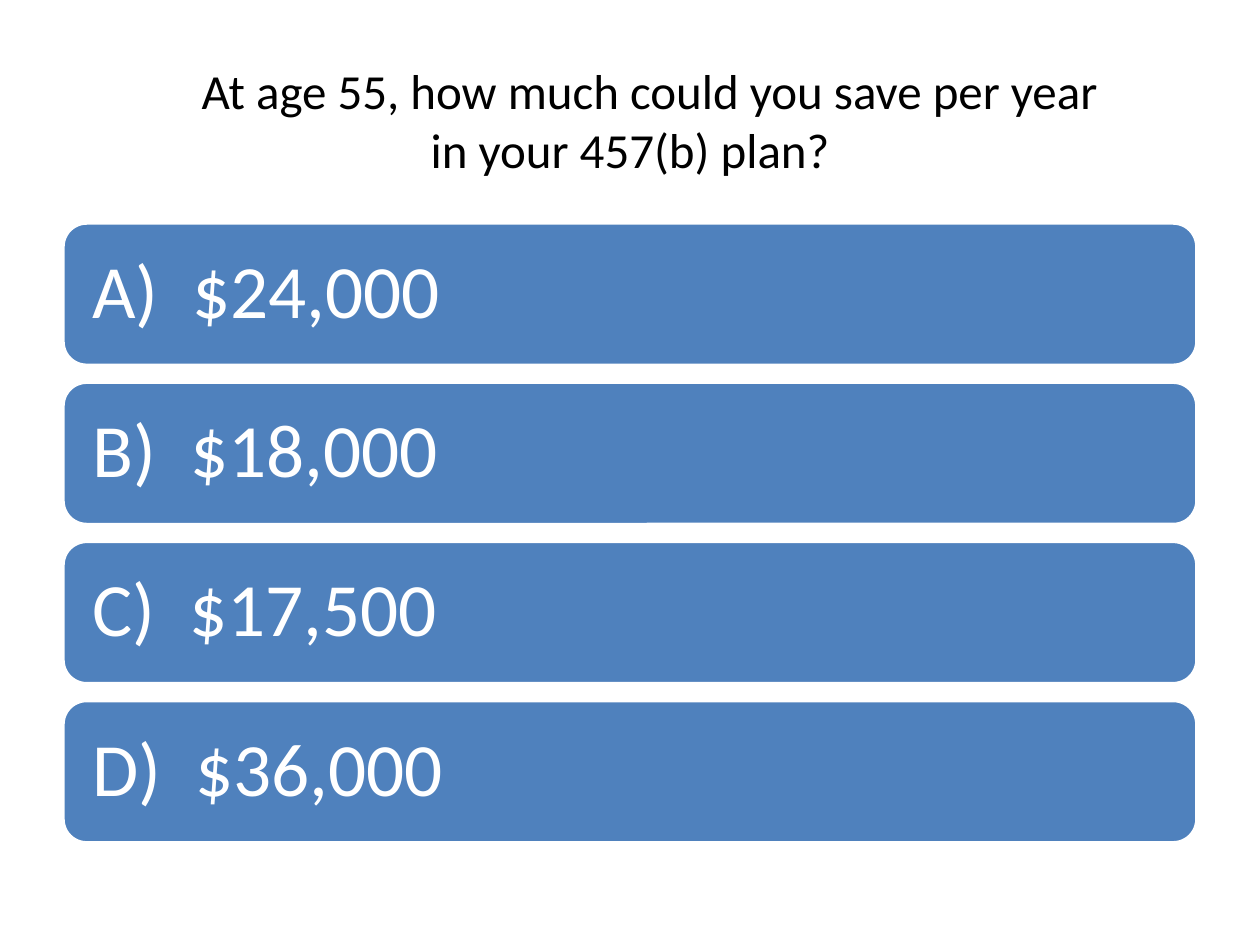
"""Build a quiz slide with one question above four answer bars."""
from dataclasses import dataclass

from pptx import Presentation
from pptx.dml.color import RGBColor
from pptx.enum.shapes import MSO_SHAPE
from pptx.enum.text import MSO_ANCHOR, PP_ALIGN
from pptx.shapes.autoshape import Shape
from pptx.slide import Slide
from pptx.util import Inches, Pt

ROUNDED = MSO_SHAPE.ROUNDED_RECTANGLE
MIDDLE = MSO_ANCHOR.MIDDLE
LEFT, CENTER = PP_ALIGN.LEFT, PP_ALIGN.CENTER

COLORS = {"question": "000000", "bar": "4F81BD", "edge": "FFFFFF", "answer": "FFFFFF"}
FONT = "Calibri"
SLIDE_WIDTH, SLIDE_HEIGHT = 10, 7.5
MARGIN = 0.05 * SLIDE_WIDTH
CONTENT_WIDTH = SLIDE_WIDTH - 2 * MARGIN
ANSWERS_TOP, ANSWERS_BOTTOM = 1.77, 6.69
BAR_HEIGHT = 1.13

QUESTION = "At age 55, how much could you save per year\vin your 457(b) plan?"


@dataclass(frozen=True)
class Answer:
    letter: str
    amount: str


ANSWERS = (
    Answer("A", "$24,000"),
    Answer("B", "$18,000"),
    Answer("C", "$17,500"),
    Answer("D", "$36,000"),
)


def rgb(role: str) -> RGBColor:
    return RGBColor.from_string(COLORS[role])


def write(holder: Shape, text: str, *, size: float, role: str, align: PP_ALIGN = LEFT,
          inset: float = 0.1, spacing: float = 1.0, indent: float = 0) -> None:
    frame = holder.text_frame
    frame.word_wrap = True
    frame.vertical_anchor = MIDDLE
    frame.margin_left = frame.margin_right = Inches(inset)
    frame.margin_top = frame.margin_bottom = Inches(0.05)
    paragraph = frame.paragraphs[0]
    paragraph.text = text
    paragraph.alignment = align
    paragraph.line_spacing = spacing
    if indent:
        paragraph._p.get_or_add_pPr().set("indent", str(Inches(indent)))
    for run in paragraph.runs:
        run.font.name = FONT
        run.font.size = Pt(size)
        run.font.color.rgb = rgb(role)


def draw_question(slide: Slide) -> None:
    question = slide.shapes.add_textbox(
        Inches(MARGIN), Inches(0.32), Inches(CONTENT_WIDTH), Inches(1.25))
    write(question, QUESTION, size=28, role="question", align=CENTER, indent=0.31)


def draw_answer(slide: Slide, answer: Answer, top: float) -> None:
    bar = slide.shapes.add_shape(
        ROUNDED, Inches(MARGIN), Inches(top), Inches(CONTENT_WIDTH), Inches(BAR_HEIGHT))
    bar.shadow.inherit = False
    bar.fill.solid()
    bar.fill.fore_color.rgb = rgb("bar")
    bar.line.color.rgb = rgb("edge")
    bar.line.width = Pt(2)
    write(bar, f"{answer.letter})  {answer.amount}", size=43, role="answer",
          inset=0.18, spacing=0.9)


def main() -> None:
    deck = Presentation()
    deck.slide_width, deck.slide_height = Inches(SLIDE_WIDTH), Inches(SLIDE_HEIGHT)
    slide = deck.slides.add_slide(deck.slide_layouts[6])
    draw_question(slide)
    pitch = (ANSWERS_BOTTOM - ANSWERS_TOP - BAR_HEIGHT) / (len(ANSWERS) - 1)
    for row, answer in enumerate(ANSWERS):
        draw_answer(slide, answer, ANSWERS_TOP + row * pitch)
    deck.save("out.pptx")


if __name__ == "__main__":
    main()
